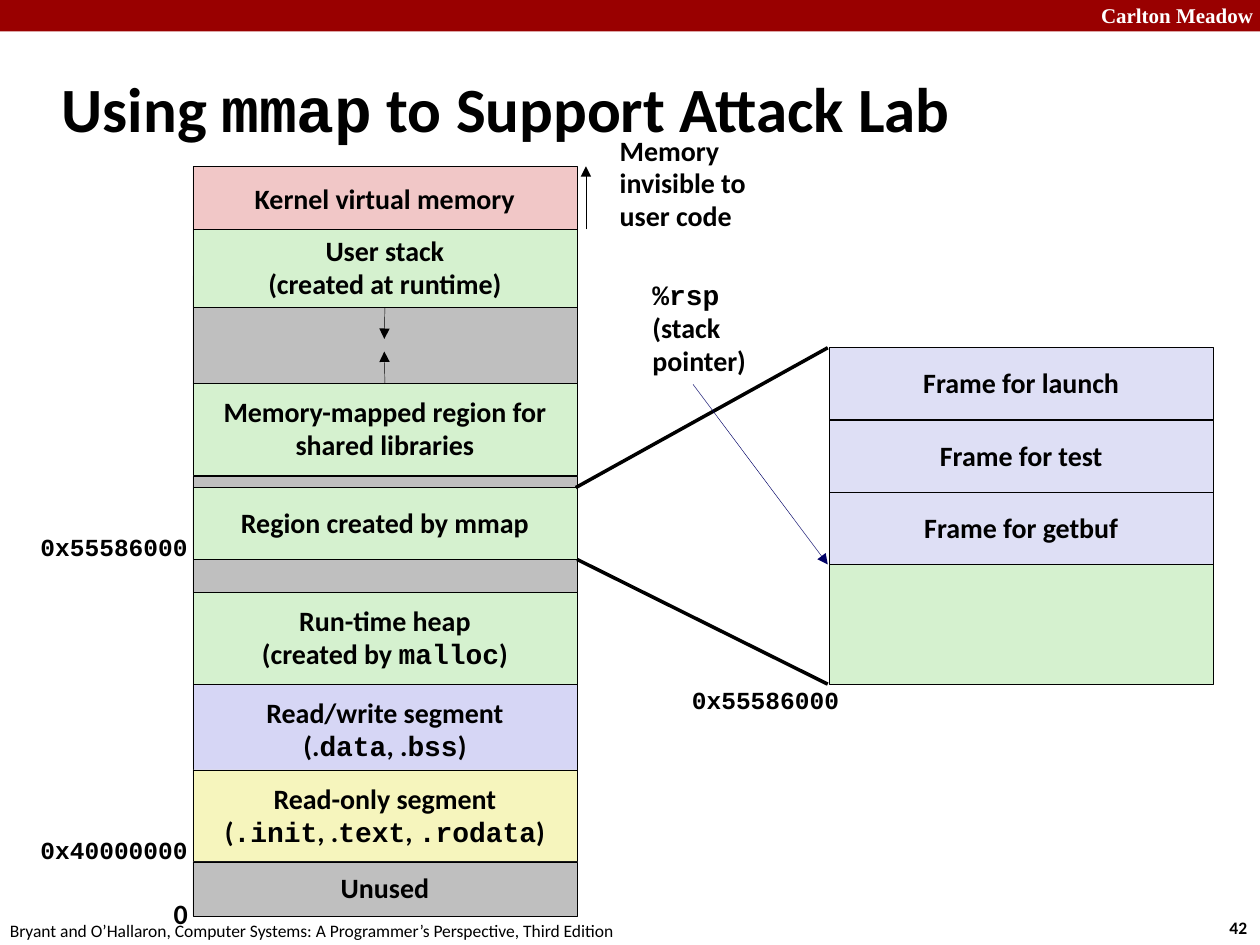
from pptx import Presentation
from pptx import util as u
from pptx.dml.color import RGBColor
from pptx.enum import shapes, text
from pptx.oxml import ns, xmlchemy

BLACK = RGBColor(0x00, 0x00, 0x00)
WHITE = RGBColor(0xFF, 0xFF, 0xFF)
MAROON = RGBColor(0x99, 0x00, 0x00)
NAVY = RGBColor(0x00, 0x00, 0x66)
PINK = RGBColor(0xF1, 0xC7, 0xC7)
GREEN = RGBColor(0xD5, 0xF1, 0xCF)
GRAY = RGBColor(0xBF, 0xBF, 0xBF)
BLUE = RGBColor(0xD6, 0xD6, 0xF5)
LILAC = RGBColor(0xDE, 0xDF, 0xF5)
YELLOW = RGBColor(0xF6, 0xF5, 0xBD)

SANS, MONO, SERIF = "Calibri", "Courier New", "Times New Roman"
LEFT, CENTER, RIGHT = (text.PP_ALIGN.LEFT, text.PP_ALIGN.CENTER,
                       text.PP_ALIGN.RIGHT)
TOP, MIDDLE = text.MSO_ANCHOR.TOP, text.MSO_ANCHOR.MIDDLE
COLUMN_X, FRAME_X, BOX_W = 1.53, 6.58, 3.05


def write(tf, content, *, size=16, font=SANS, color=BLACK, bold=True,
          align=LEFT, anchor=TOP, spacing=0.98, wrap=False):
    """Fill a text frame; backticks switch to the monospaced font."""
    tf.word_wrap = wrap
    tf.vertical_anchor = anchor
    for i, line in enumerate(content.split("\n")):
        p = tf.paragraphs[0] if i == 0 else tf.add_paragraph()
        p.alignment = align
        p.line_spacing = spacing
        for j, part in enumerate(line.split("`")):
            if part:
                r = p.add_run()
                r.text = part
                r.font.name = MONO if j % 2 else font
                r.font.size = u.Pt(size)
                r.font.bold = bold
                r.font.color.rgb = color


class Slide:
    def __init__(self, prs):
        self.s = prs.slides.add_slide(prs.slide_layouts[5])

    def title(self, content, x, y, w, h):
        sp = self.s.shapes.title
        sp.left, sp.top, sp.width, sp.height = map(u.Inches, (x, y, w, h))
        sp.text_frame.auto_size = text.MSO_AUTO_SIZE.NONE
        write(sp.text_frame, content, size=36, anchor=MIDDLE, spacing=0.82,
              wrap=True)

    def box(self, content, x, y, w, h, fill, outline=True):
        sp = self.s.shapes.add_shape(shapes.MSO_SHAPE.RECTANGLE,
                                     *map(u.Inches, (x, y, w, h)))
        sp.shadow.inherit = False
        sp.fill.solid()
        sp.fill.fore_color.rgb = fill
        if outline:
            sp.line.color.rgb = BLACK
            sp.line.width = u.Pt(0.25)
        else:
            sp.line.fill.background()
        if content:
            write(sp.text_frame, content, align=CENTER, anchor=MIDDLE)
        return sp

    def label(self, content, x, y, w, h, **style):
        sp = self.s.shapes.add_textbox(*map(u.Inches, (x, y, w, h)))
        write(sp.text_frame, content, **style)

    def address(self, content, x, y):
        self.label(f"`{content}`", x, y, 1.37, 0.33, size=14, align=RIGHT,
                   spacing=0.94)

    def line(self, x1, y1, x2, y2, color=BLACK, width=0.25, arrow=True):
        c = self.s.shapes.add_connector(shapes.MSO_CONNECTOR.STRAIGHT,
                                        *map(u.Inches, (x1, y1, x2, y2)))
        c.line.color.rgb = color
        c.line.width = u.Pt(width)
        if arrow:
            tail = xmlchemy.OxmlElement("a:tailEnd")
            tail.set("type", "triangle")
            c.line._get_or_add_ln().append(tail)
        c._element.find(ns.qn("p:spPr")).append(
            xmlchemy.OxmlElement("a:effectLst"))
        return c


def main():
    prs = Presentation()
    prs.slide_width, prs.slide_height = u.Inches(10), u.Inches(7.5)
    s = Slide(prs)

    s.box("", 0, 0, 10, 0.25, MAROON, outline=False)
    s.label("Carlton Meadow", 8.64, -0.03, 1.43, 0.3, size=12, font=SERIF,
            color=WHITE, spacing=1, wrap=True)
    s.label("42", 9.66, 7.23, 0.37, 0.27, size=10, spacing=1)
    s.label("Bryant and O’Hallaron, Computer Systems: "
            "A Programmer’s Perspective, Third Edition",
            -0.02, 7.25, 5.08, 0.27, size=10, bold=False, spacing=1)
    s.title("Using `mmap` to Support Attack Lab", 0.39, 0.49, 8.3, 0.83)

    regions = [
        ("", 2.19, 0.86, GRAY),
        ("", 3.78, 0.92, GRAY),
        ("Kernel virtual memory", 1.32, 0.53, PINK),
        ("User stack\n(created at runtime)", 1.82, 0.62, GREEN),
        ("Memory-mapped region for\nshared libraries", 3.04, 0.73, GREEN),
        ("Region created by mmap", 3.87, 0.57, GREEN),
        ("Run-time heap\n(created by `malloc`)", 4.7, 0.73, GREEN),
        ("Read/write segment\n(.`data`, .`bss`)", 5.43, 0.73, BLUE),
        ("Read-only segment\n(`.init`, .`text`, `.rodata`)", 6.11, 0.73,
         YELLOW),
        ("Unused", 6.84, 0.43, GRAY),
    ]
    boxes = [s.box(name, COLUMN_X, y, BOX_W, h, fill)
             for name, y, h, fill in regions]
    stack, mapped = boxes[3:5]
    s.line(3.05, 2.44, 3.05, 2.69).begin_connect(stack, 2)
    s.line(3.05, 3.04, 3.05, 2.79).begin_connect(mapped, 0)
    s.line(4.65, 1.82, 4.65, 1.32)

    s.box("", FRAME_X, 2.78, BOX_W, 2.65, GREEN)
    for i, name in enumerate(("launch", "test", "getbuf")):
        s.box(f"Frame for {name}", FRAME_X, 2.76 + 0.575 * i, BOX_W, 0.57,
              LILAC)
    s.line(6.57, 2.76, 4.57, 3.87, width=2, arrow=False)
    s.line(6.57, 5.43, 4.58, 4.44, width=2, arrow=False)
    s.line(5.5, 3.05, 6.57, 4.48, color=NAVY)

    s.label("Memory\ninvisible to\nuser code", 4.82, 1.02, 1.26, 0.89)
    s.label("`%rsp`\n(stack\npointer)", 5.08, 2.17, 0.95, 0.88)
    s.label("0", 1.28, 7.08, 0.31, 0.37)
    s.address("0x55586000", 0.22, 4.19)
    s.address("0x40000000", 0.22, 6.6)
    s.address("0x55586000", 5.39, 5.41)

    prs.save("out.pptx")


if __name__ == "__main__":
    main()
